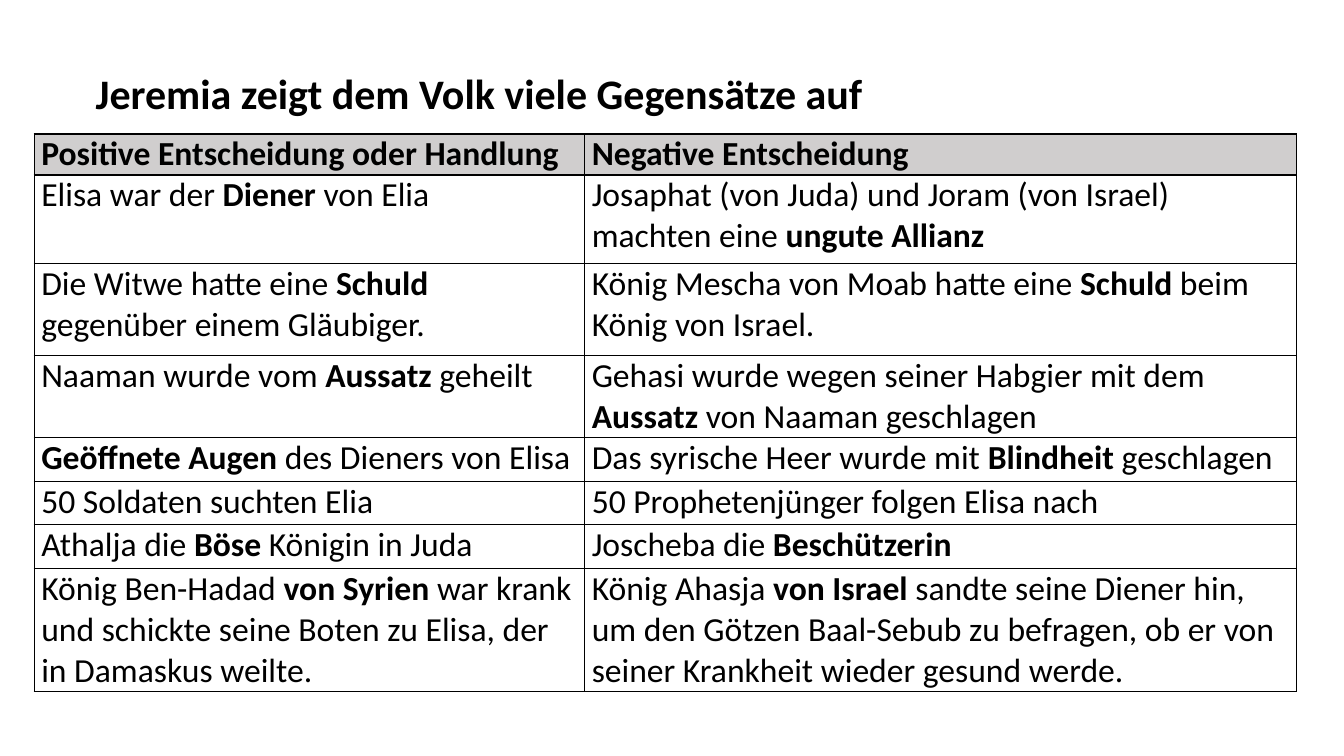
from lxml.etree import SubElement
from pptx import Presentation
from pptx.dml.color import RGBColor
from pptx.enum.text import MSO_ANCHOR
from pptx.oxml.ns import qn
from pptx.util import Inches, Pt

BLACK = RGBColor(0x00, 0x00, 0x00)
HEADER_GREY = RGBColor(0xD0, 0xCE, 0xCE)

# Table content; ** encloses bold words
CONTRASTS = [
    ("**Positive Entscheidung oder Handlung**", "**Negative Entscheidung**"),
    ("Elisa war der **Diener **von Elia",
     "Josaphat (von Juda) und Joram (von Israel) machten eine **ungute Allianz**"),
    ("Die Witwe hatte eine **Schuld** gegenüber einem Gläubiger.",
     "König Mescha von Moab hatte eine **Schuld** beim König von Israel."),
    ("Naaman wurde vom **Aussatz** geheilt",
     "Gehasi wurde wegen seiner Habgier mit dem **Aussatz** von Naaman geschlagen"),
    ("**Geöffnete Augen** des Dieners von Elisa",
     "Das syrische Heer wurde mit **Blindheit** geschlagen"),
    ("50 Soldaten suchten Elia", "50 Prophetenjünger folgen Elisa nach"),
    ("Athalja die **Böse** Königin in Juda", "Joscheba die **Beschützerin**"),
    ("König Ben-Hadad **von Syrien **war krank und schickte seine Boten zu Elisa, "
     "der in Damaskus weilte.",
     "König Ahasja **von Israel **sandte seine Diener hin, um den Götzen Baal-Sebub "
     "zu befragen, ob er von seiner Krankheit wieder gesund werde."),
]
COL_WIDTHS = [40.96, 52.96]
ROW_HEIGHTS = [4.53, 11.73, 12.13, 9.07, 5.87, 5.6, 5.87, 13.6]


def write(p, text, size=24, font="Calibri", color=BLACK):
    """Fill a paragraph, setting the words between ** in bold."""
    for i, part in enumerate(text.split("**")):
        if part:
            r = p.add_run()
            r.text = part
            r.font.size, r.font.name = Pt(size), font
            r.font.bold = i % 2 == 1
            r.font.color.rgb = color


class Deck:
    """One slide on a grid of 100 columns by 100 rows."""

    def __init__(self, width=13.33, height=7.5):
        self.prs = Presentation()
        self.prs.slide_width, self.prs.slide_height = Inches(width), Inches(height)
        self.s = self.prs.slides.add_slide(self.prs.slide_layouts[6])

    def x(self, cols):
        return round(self.prs.slide_width * cols / 100)

    def y(self, rows):
        return round(self.prs.slide_height * rows / 100)

    def title(self, text, left, top, width, height):
        box = self.s.shapes.add_textbox(self.x(left), self.y(top),
                                        self.x(width), self.y(height))
        tf = box.text_frame
        tf.word_wrap = True
        p = tf.paragraphs[0]
        p.line_spacing, p.space_before = 1.07, Pt(12)
        write(p, text, size=30)

    def border(self, cell, width=1):
        tcPr = cell._tc.get_or_add_tcPr()
        for side in ("a:lnL", "a:lnR", "a:lnT", "a:lnB"):
            ln = SubElement(tcPr, qn(side), w=str(Pt(width)))
            fill = SubElement(ln, qn("a:solidFill"))
            SubElement(fill, qn("a:srgbClr"), val=str(BLACK))

    def table(self, content, left, top, widths, heights):
        frame = self.s.shapes.add_table(
            len(heights), len(widths), self.x(left), self.y(top),
            self.x(sum(widths)), self.y(sum(heights)))
        tbl = frame.table
        tbl.horz_banding = False
        for col, width in zip(tbl.columns, widths):
            col.width = self.x(width)
        for i, (row, height) in enumerate(zip(tbl.rows, heights)):
            row.height = self.y(height)
            for cell, text in zip(row.cells, content[i]):
                cell.margin_left = cell.margin_right = Inches(0.07)
                cell.margin_top = cell.margin_bottom = 0
                cell.vertical_anchor = MSO_ANCHOR.TOP
                self.border(cell)
                if i == 0:
                    cell.fill.solid()
                    cell.fill.fore_color.rgb = HEADER_GREY
                else:
                    cell.fill.background()
                write(cell.text_frame.paragraphs[0], text)


def main():
    deck = Deck()
    # Table of contrasts
    deck.table(CONTRASTS, 2.55, 17.73, COL_WIDTHS, ROW_HEIGHTS)
    # Heading
    deck.title("**Jeremia zeigt dem Volk viele Gegensätze auf**", 6.38, 7.87, 82.9, 8.27)
    deck.prs.save("out.pptx")


if __name__ == "__main__":
    main()
